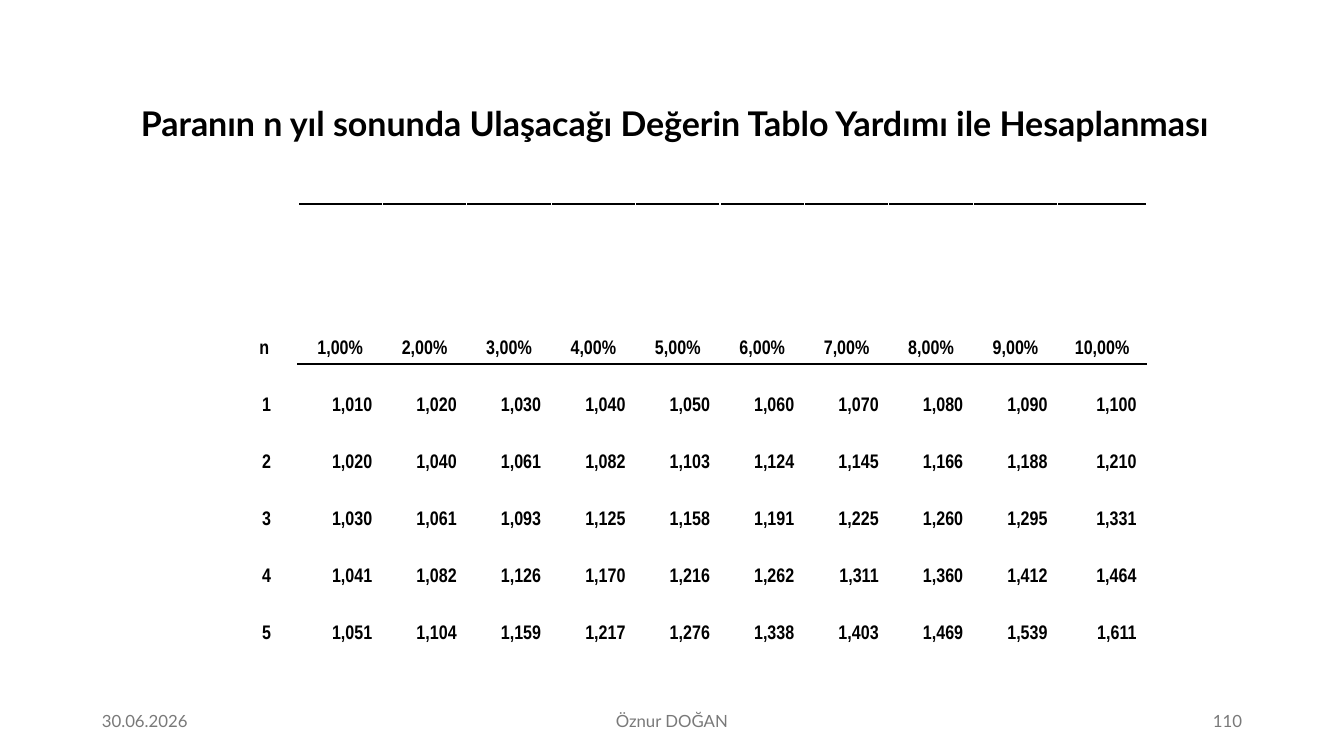
from lxml import etree
from pptx import Presentation
from pptx.dml.color import RGBColor
from pptx.enum.text import MSO_ANCHOR, PP_ALIGN
from pptx.oxml.ns import qn
from pptx.util import Emu, Pt

EMU_PER_PX = 914400 / 100.8
BLACK = RGBColor(0x00, 0x00, 0x00)
GREY = RGBColor(0x79, 0x79, 0x79)
LEFT, CENTER, RIGHT = PP_ALIGN.LEFT, PP_ALIGN.CENTER, PP_ALIGN.RIGHT
MIDDLE, BOTTOM = MSO_ANCHOR.MIDDLE, MSO_ANCHOR.BOTTOM

TITLE = "Paranın n yıl sonunda Ulaşacağı Değerin Tablo Yardımı ile Hesaplanması"
RATES = range(1, 11)
YEARS = range(1, 6)


def px(length):
    return Emu(round(length * EMU_PER_PX))


def style(para, align, font_name, size, color, bold=False):
    para.alignment = align
    for span in para.runs:
        span.font.name = font_name
        span.font.size = Pt(size)
        span.font.color.rgb = color
        span.font.bold = bold


def add_text(page, box, text, align, size, color, bold=False):
    frame = page.shapes.add_textbox(*map(px, box)).text_frame
    frame.word_wrap = True
    frame.vertical_anchor = MIDDLE
    para = frame.paragraphs[0]
    para.text = text
    style(para, align, "Lato", size, color, bold)
    return para


def add_title(page, box):
    add_text(page, box, TITLE, LEFT, 24.3, BLACK, bold=True).line_spacing = 0.9


def add_footer(page, box):
    left, top, width, height = box
    side, middle = 302, 454
    add_text(page, (left, top, side, height), "30.06.2026", LEFT, 12, GREY)
    add_text(page, (left + (width - middle) // 2, top, middle, height),
             "Öznur DOĞAN", CENTER, 12, GREY)
    add_text(page, (left + width - side, top, side, height), "110", RIGHT, 12, GREY)


def growth_factor(rate, year):
    """Compound growth to three decimals, rounded half up, with a decimal comma."""
    scale = 100 ** year
    thousandths = (2000 * (100 + rate) ** year + scale) // (2 * scale)
    return f"{thousandths // 1000},{thousandths % 1000:03d}"


def add_border(cell, tag):
    line = etree.SubElement(cell._tc.get_or_add_tcPr(), qn(tag), w=str(Pt(1)))
    fill = etree.SubElement(line, qn("a:solidFill"))
    etree.SubElement(fill, qn("a:srgbClr"), val=str(BLACK))


def fill_cell(cell, text, align, borders):
    for tag in borders:
        add_border(cell, tag)
    cell.fill.background()
    cell.vertical_anchor = BOTTOM
    para = cell.text_frame.paragraphs[0]
    para.text = text
    style(para, align, "Arial Narrow", 14, BLACK, bold=True)
    properties = para._p.get_or_add_pPr()
    properties.set("marL", str(px(38)))
    properties.set("indent", str(-px(38)))


def add_growth_table(page, box):
    left, top, width, height = box
    year_width, last_width, header_height = 63, 89, 160
    rows = [["n "] + [f"{rate},00%" for rate in RATES]]
    rows += [[str(year)] + [growth_factor(rate, year) for rate in RATES]
             for year in YEARS]

    table = page.shapes.add_table(len(rows), len(rows[0]), *map(px, box)).table
    table.first_row = False
    table.horz_banding = False
    rate_width = (width - year_width - last_width) / (len(RATES) - 1)
    widths = [year_width] + [rate_width] * (len(RATES) - 1) + [last_width]
    for column, column_width in zip(table.columns, widths):
        column.width = px(column_width)
    year_height = (height - header_height) / len(YEARS)
    for row, row_height in zip(table.rows, [header_height] + [year_height] * len(YEARS)):
        row.height = px(row_height)

    borders_by_row = {0: ("a:lnT", "a:lnB"), 1: ("a:lnT",)}
    for r, texts in enumerate(rows):
        for c, text in enumerate(texts):
            align = CENTER if r == 0 or c == 0 else RIGHT
            borders = borders_by_row.get(r, ()) if c else ()
            fill_cell(table.cell(r, c), text, align, borders)


def main():
    deck = Presentation()
    deck.slide_width, deck.slide_height = px(1344), px(756)
    page = deck.slides.add_slide(deck.slide_layouts[6])
    add_title(page, (131, 86, 1121, 80))
    add_footer(page, (92, 701, 1160, 40))
    add_growth_table(page, (235, 204, 912, 445))
    deck.save("out.pptx")


if __name__ == "__main__":
    main()
